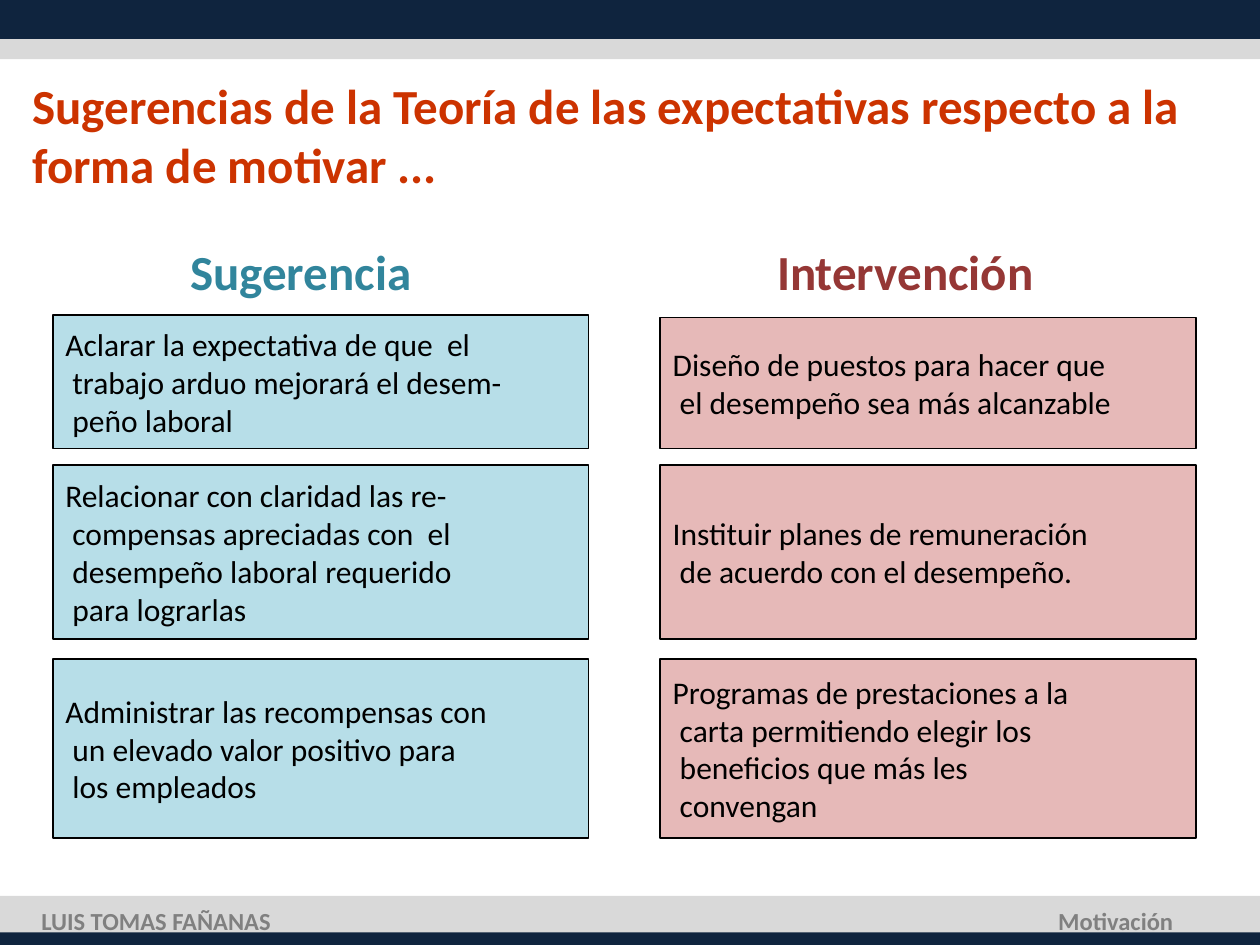
from pptx import Presentation
from pptx.dml.color import RGBColor
from pptx.enum import shapes, text
from pptx.util import Inches, Pt

W, H = 10, 7.5
FONT = "Calibri"
COLORS = {
    "navy": "0F243E", "gray": "D9D9D9", "title": "CC3300", "footer": "808080",
    "teal": "31859C", "wine": "953735", "blue": "B7DEE8", "pink": "E6B9B8",
    "black": "000000",
}
CARD_W = 4.25
ROWS = [(2.5, 1.06), (3.69, 1.38), (5.23, 1.42)]
COLUMNS = [
    {
        "x": 0.42, "fill": "blue", "color": "teal", "top_offset": 0,
        "heading": "Sugerencia", "heading_x": 1.41, "heading_w": 1.98,
        "cards": [
            ["Aclarar la expectativa de que  el",
             " trabajo arduo mejorará el desem-",
             " peño laboral"],
            ["Relacionar con claridad las re-",
             " compensas apreciadas con  el",
             " desempeño laboral requerido",
             " para lograrlas"],
            ["Administrar las recompensas con",
             " un elevado valor positivo para",
             " los empleados"],
        ],
    },
    {
        "x": 5.24, "fill": "pink", "color": "wine", "top_offset": 0.02,
        "heading": "Intervención", "heading_x": 6.07, "heading_w": 2.26,
        "cards": [
            ["Diseño de puestos para hacer que",
             " el desempeño sea más alcanzable"],
            ["Instituir planes de remuneración",
             " de acuerdo con el desempeño."],
            ["Programas de prestaciones a la",
             " carta permitiendo elegir los",
             " beneficios que más les",
             " convengan"],
        ],
    },
]


def rgb(name):
    return RGBColor.from_string(COLORS[name])


def write(tf, lines, size, color, bold=False, align=text.PP_ALIGN.LEFT):
    for i, line in enumerate(lines):
        p = tf.add_paragraph() if i else tf.paragraphs[0]
        p.alignment = align
        r = p.add_run()
        r.text = line
        r.font.name = FONT
        r.font.size = Pt(size)
        r.font.bold = bold
        r.font.color.rgb = rgb(color)


def add_rect(s, x, y, w, h, fill):
    sp = s.shapes.add_shape(shapes.MSO_SHAPE.RECTANGLE,
                            Inches(x), Inches(y), Inches(w), Inches(h))
    sp.shadow.inherit = False
    sp.fill.solid()
    sp.fill.fore_color.rgb = rgb(fill)
    sp.line.fill.background()
    return sp


def add_card(s, x, y, h, fill, lines):
    sp = add_rect(s, x, y, CARD_W, h, fill)
    sp.line.color.rgb = rgb("black")
    sp.line.width = Pt(1)
    tf = sp.text_frame
    tf.word_wrap = True
    tf.vertical_anchor = text.MSO_ANCHOR.MIDDLE
    write(tf, lines, 18, "black")


def add_label(s, x, y, w, h, line, size, color, wrap=False,
              anchor=text.MSO_ANCHOR.TOP, align=text.PP_ALIGN.LEFT):
    tf = s.shapes.add_textbox(Inches(x), Inches(y), Inches(w), Inches(h)).text_frame
    tf.word_wrap = wrap
    tf.auto_size = text.MSO_AUTO_SIZE.SHAPE_TO_FIT_TEXT
    tf.vertical_anchor = anchor
    write(tf, [line], size, color, bold=True, align=align)


def add_bands(s):
    for y, h, fill in [(0, 0.47, "gray"), (0, 0.31, "navy"),
                       (7.11, 0.34, "gray"), (7.4, 0.1, "navy")]:
        add_rect(s, 0, y, W, h, fill)


def add_column(s, col):
    add_label(s, col["heading_x"], 1.87, col["heading_w"], 0.57,
              col["heading"], 28, col["color"])
    for i, ((y, h), lines) in enumerate(zip(ROWS, col["cards"])):
        offset = 0 if i else col["top_offset"]
        add_card(s, col["x"], y + offset, h - offset, col["fill"], lines)


def add_footer(s):
    middle = text.MSO_ANCHOR.MIDDLE
    add_label(s, 0.23, 7.14, 2.04, 0.34, "LUIS TOMAS FAÑANAS", 14, "footer",
              anchor=middle)
    add_label(s, 8.29, 7.14, 1.12, 0.34, "Motivación", 14, "footer",
              anchor=middle, align=text.PP_ALIGN.RIGHT)


def main():
    prs = Presentation()
    prs.slide_width, prs.slide_height = Inches(W), Inches(H)
    s = prs.slides.add_slide(prs.slide_layouts[6])
    add_bands(s)
    add_label(s, 0.16, 0.55, 9.33, 1.04,
              "Sugerencias de la Teoría de las expectativas respecto a la "
              "forma de motivar ...", 28, "title", wrap=True)
    for col in COLUMNS:
        add_column(s, col)
    add_footer(s)
    prs.save("out.pptx")


if __name__ == "__main__":
    main()
